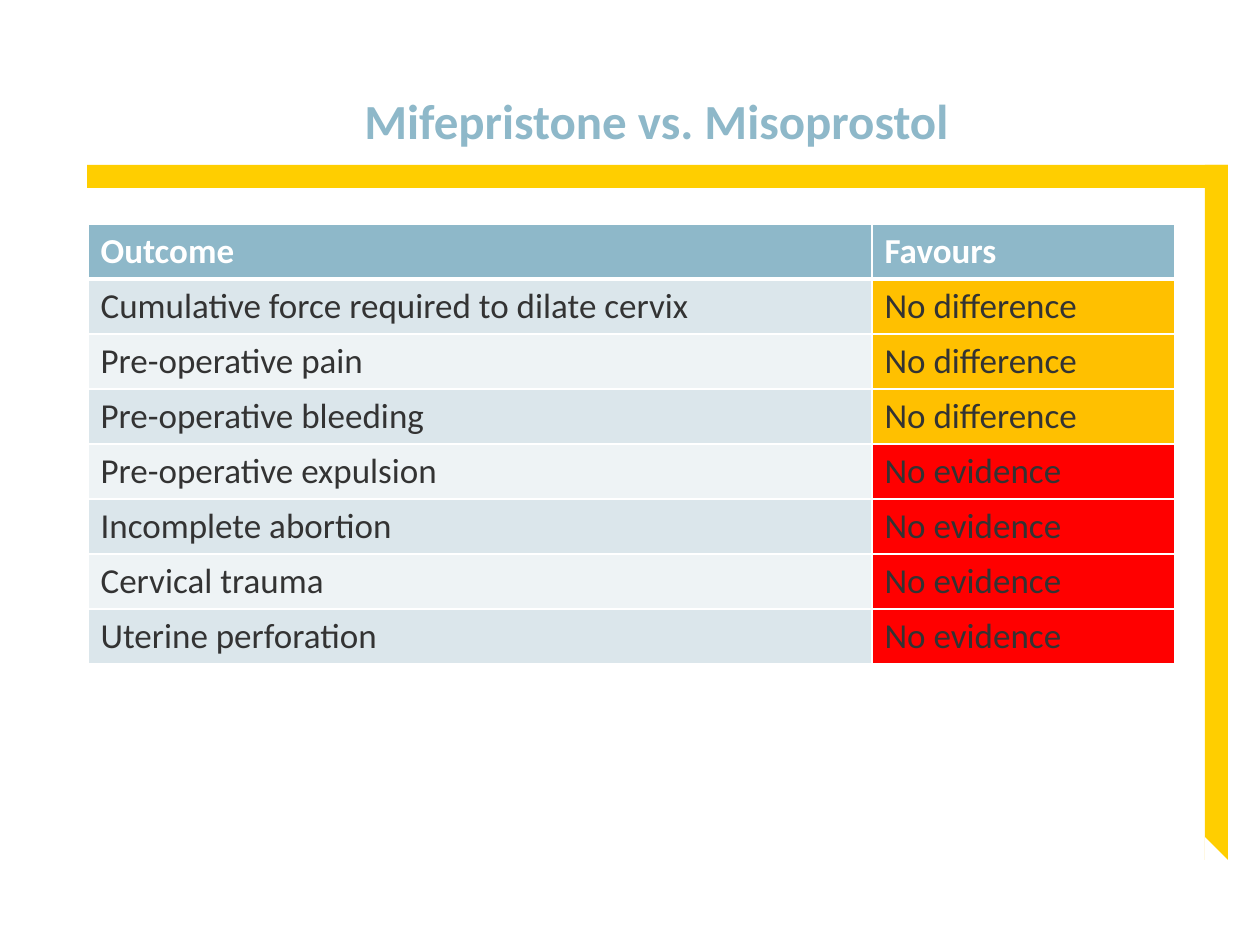
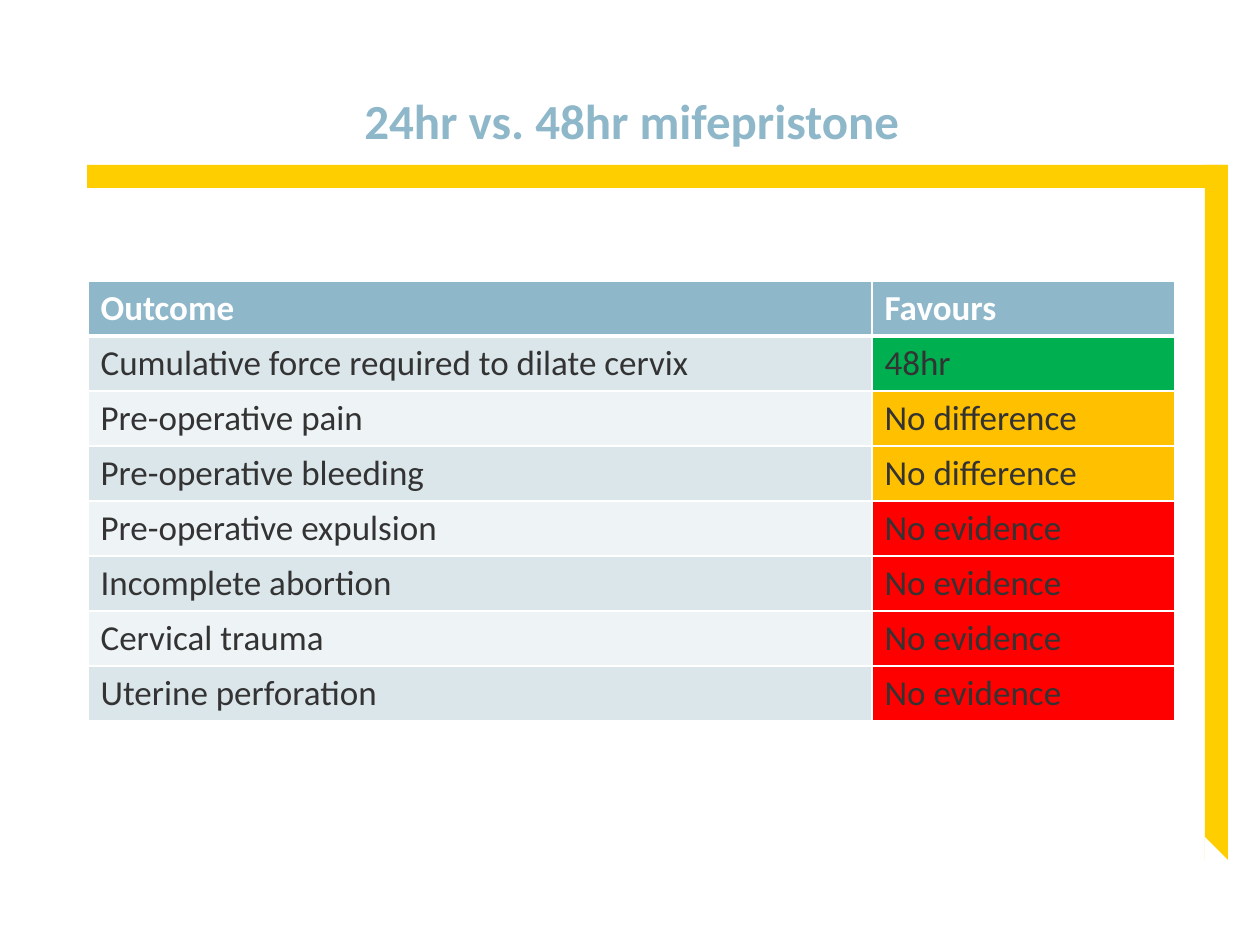
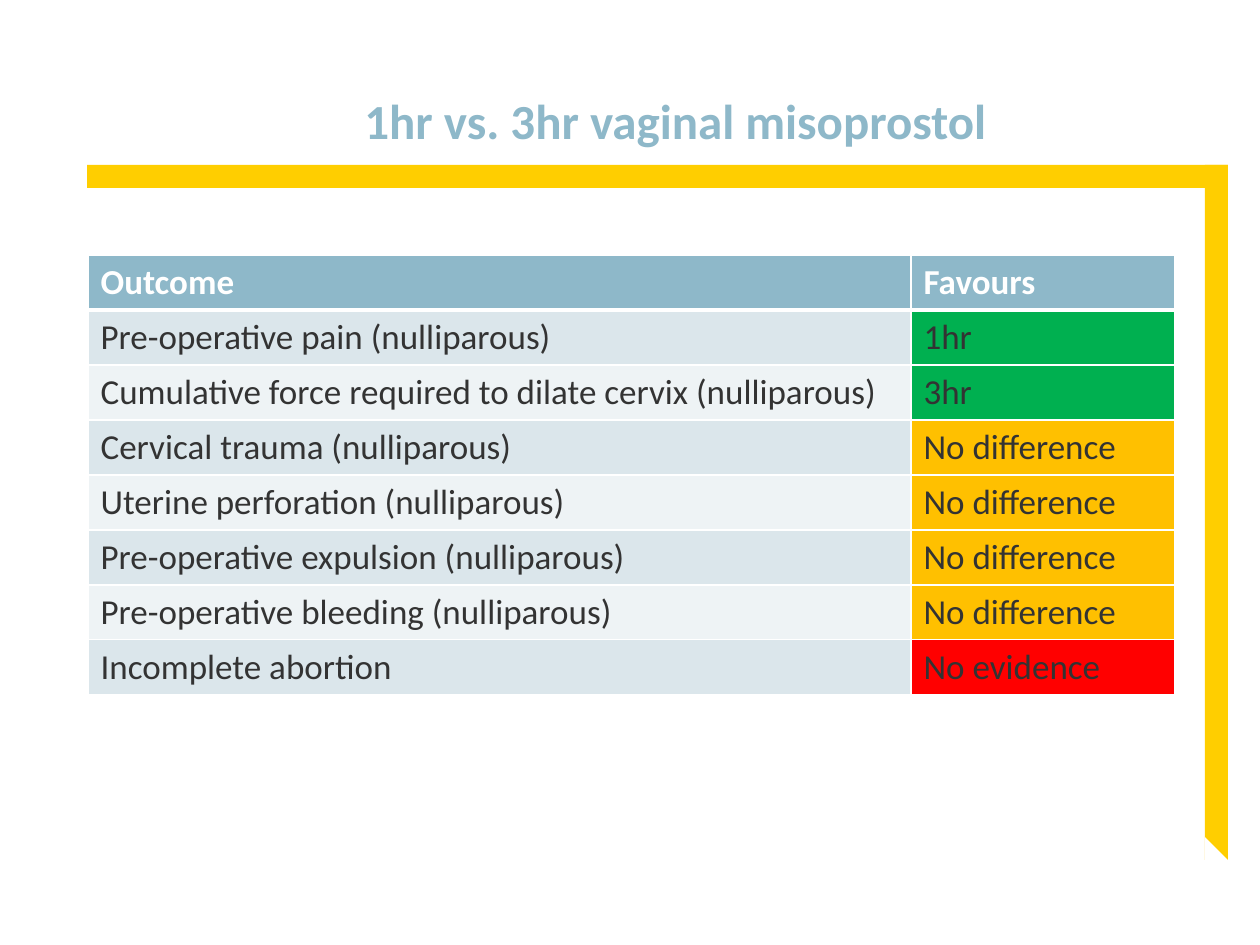
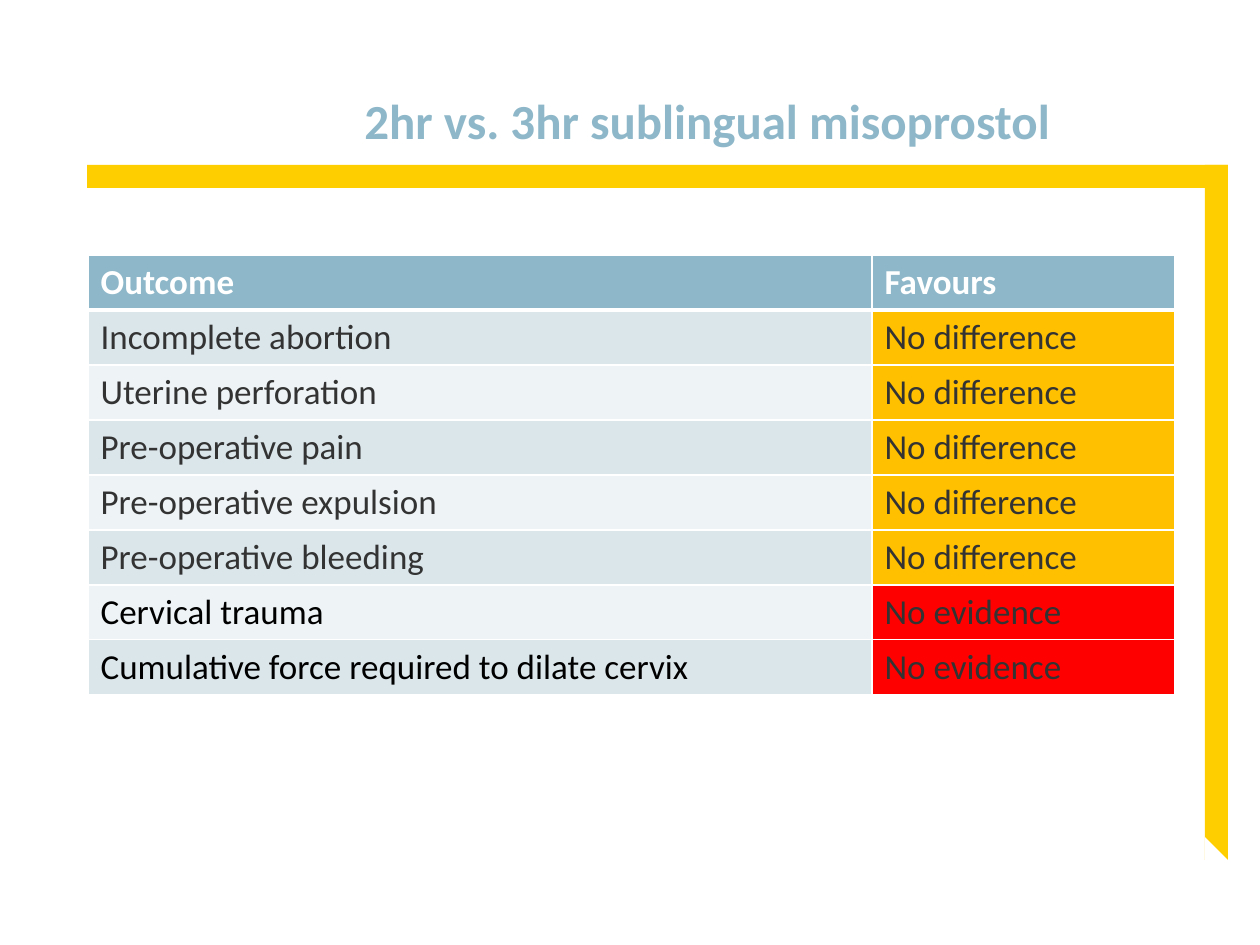
from dataclasses import dataclass

from lxml import etree
from pptx import Presentation
from pptx import util as u
from pptx.dml.color import RGBColor
from pptx.enum import shapes, text
from pptx.oxml import ns

# Content: title, table top, first column width, rows of (outcome, favours)
HEAD = ("Outcome", "Favours")
FORCE = "Cumulative force required to dilate cervix"
PAIN = "Pre-operative pain"
BLEED = "Pre-operative bleeding"
EXPEL = "Pre-operative expulsion"
PART = "Incomplete abortion"
TRAUMA = "Cervical trauma"
PERF = "Uterine perforation"
NULL = " (nulliparous)"
SAME = "No difference"
NONE = "No evidence"

DECK = [
    dict(title="Mifepristone vs. Misoprostol", top=224, wide=784, rows=[
        (FORCE, SAME), (PAIN, SAME), (BLEED, SAME), (EXPEL, NONE),
        (PART, NONE), (TRAUMA, NONE), (PERF, NONE)]),
    dict(title="24hr vs. 48hr mifepristone", top=281, wide=784, rows=[
        (FORCE, "48hr"), (PAIN, SAME), (BLEED, SAME), (EXPEL, NONE),
        (PART, NONE), (TRAUMA, NONE), (PERF, NONE)]),
    dict(title="1hr vs. 3hr vaginal misoprostol", top=255, wide=823, rows=[
        (PAIN + NULL, "1hr"), (FORCE + NULL, "3hr"), (TRAUMA + NULL, SAME),
        (PERF + NULL, SAME), (EXPEL + NULL, SAME), (BLEED + NULL, SAME),
        (PART, NONE)]),
    dict(title="2hr vs. 3hr sublingual misoprostol", top=255, wide=784, rows=[
        (PART, SAME), (PERF, SAME), (PAIN, SAME), (EXPEL, SAME),
        (BLEED, SAME), (TRAUMA, NONE), (FORCE, NONE)],
        dark={TRAUMA, FORCE}),
]


@dataclass(frozen=True)
class Theme:
    font: str = "Calibri"
    title: int = 28
    body: int = 20
    blue: str = "8EB8C9"
    gold: str = "FFCE00"
    white: str = "FFFFFF"
    ink: str = "333333"
    black: str = "000000"
    bands: tuple = ("DBE6EB", "EEF3F5")
    amber: str = "FFC000"
    red: str = "FF0000"
    green: str = "00B050"


T = Theme()
VERDICT = {SAME: T.amber, NONE: T.red}  # any other answer is green

# Layout in px, 126 to the inch
WIDE, HIGH = 1260, 945
BAR = 23
LEFT, TOP, RIGHT, FOOT = 87, 165, 1228, 860
TITLE = (319, 25, 906, 131)
TAB_X, TAB_W, ROW_H = 88, 1087, 55


def px(n):
    return u.Emu(round(n * 914400 / 126))


def rgb(code):
    return RGBColor.from_string(code)


def write(para, words, size, color, bold):
    run = para.add_run()
    run.text = words
    font = run.font
    font.name, font.size, font.bold = T.font, u.Pt(size), bold
    font.color.rgb = rgb(color)


def block(home, kind, box, color):
    shape = home.add_shape(kind, *map(px, box))
    shape.shadow.inherit = False
    shape.fill.solid()
    shape.fill.fore_color.rgb = rgb(color)
    shape.line.fill.background()
    return shape


def frame(slide):
    """Gold top bar and side bar, the side bar cut off at a slant."""
    kind = shapes.MSO_SHAPE
    side = RIGHT - BAR
    block(slide.shapes, kind.RECTANGLE, (LEFT, TOP, RIGHT - LEFT, BAR), T.gold)
    group = slide.shapes.add_group_shape().shapes
    block(group, kind.RECTANGLE, (side, TOP, BAR, FOOT - TOP), T.gold)
    cut = block(group, kind.ISOSCELES_TRIANGLE,
                (side, FOOT - BAR, BAR, BAR), T.white)
    cut.adjustments[0] = 0


def title(slide, words):
    tf = slide.shapes.add_textbox(*map(px, TITLE)).text_frame
    tf.word_wrap = True
    tf.vertical_anchor = text.MSO_ANCHOR.BOTTOM
    para = tf.paragraphs[0]
    para.line_spacing = 0.9
    para._p.get_or_add_pPr().set("marL", str(px(33)))
    write(para, words, T.title, T.blue, True)


def edges(cell, top, foot):
    """White cell borders, placed ahead of the fill; widths in points."""
    prop = cell._tc.get_or_add_tcPr()
    sides = (("lnL", 1), ("lnR", 1), ("lnT", top), ("lnB", foot))
    for i, (tag, width) in enumerate(sides):
        line = etree.Element(ns.qn("a:" + tag), w=str(u.Pt(width)))
        fill = etree.SubElement(line, ns.qn("a:solidFill"))
        etree.SubElement(fill, ns.qn("a:srgbClr"), val=T.white)
        prop.insert(i, line)


def table(slide, page):
    rows = [HEAD] + page["rows"]
    grid = slide.shapes.add_table(
        len(rows), 2, px(TAB_X), px(page["top"]),
        px(TAB_W), px(ROW_H * len(rows))).table
    grid.horz_banding = False
    for col, width in zip(grid.columns, (page["wide"], TAB_W - page["wide"])):
        col.width = px(width)
    for r, row in enumerate(rows):
        grid.rows[r].height = px(ROW_H)
        for c, words in enumerate(row):
            head = r == 0
            if head:
                back, ink = T.blue, T.white
            else:
                back = VERDICT.get(words, T.green) if c else T.bands[(r - 1) % 2]
                ink = T.black if words in page.get("dark", ()) else T.ink
            cell = grid.cell(r, c)
            cell.fill.solid()
            cell.fill.fore_color.rgb = rgb(back)
            edges(cell, 3 if r == 1 else 1, 3 if head else 1)
            write(cell.text_frame.paragraphs[0], words, T.body, ink, head)


def main():
    deck = Presentation()
    deck.slide_width, deck.slide_height = px(WIDE), px(HIGH)
    for page in DECK:
        slide = deck.slides.add_slide(deck.slide_layouts[6])
        frame(slide)
        title(slide, page["title"])
        table(slide, page)
    deck.save("out.pptx")


if __name__ == "__main__":
    main()
